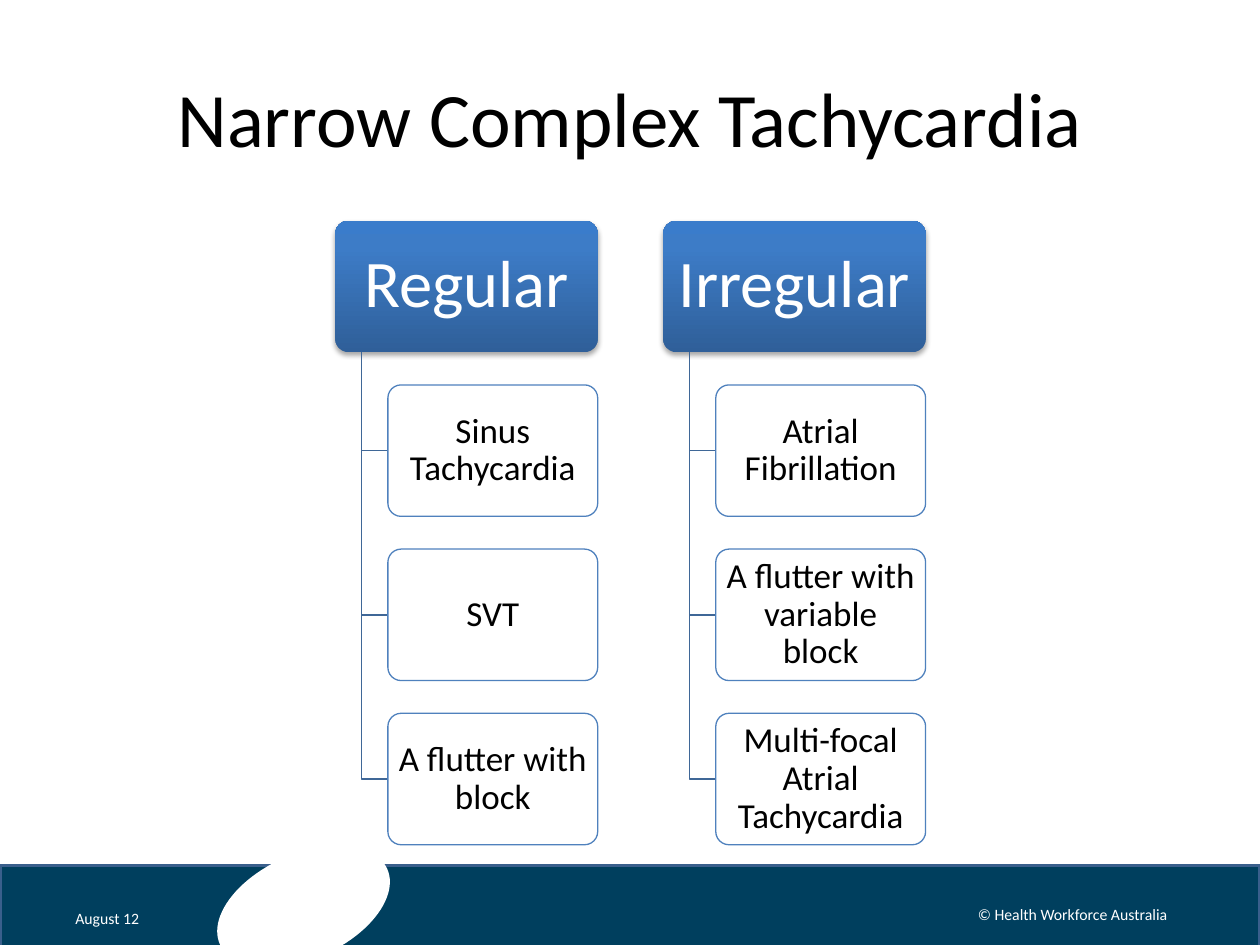
from lxml.etree import SubElement
from pptx import Presentation
from pptx.dml.color import RGBColor
from pptx.enum.shapes import MSO_SHAPE
from pptx.enum.text import MSO_ANCHOR, PP_ALIGN
from pptx.oxml.ns import qn
from pptx.util import Cm, Pt

COLORS = {
    "white": "FFFFFF",
    "black": "000000",
    "band": "003F5E",
    "band_line": "3A5F8C",
    "head_dark": "2F5F99",
    "head_mid": "3D7CC7",
    "head_light": "3A7CCB",
    "elbow": "3F6797",
    "outline": "4F81BD",
}
FONT = "Calibri"

BRANCHES = {
    "Regular": ["Sinus Tachycardia", "SVT", "A flutter with block"],
    "Irregular": [
        "Atrial Fibrillation",
        "A flutter with variable block",
        "Multi-focal Atrial Tachycardia",
    ],
}
LEFT, TOP = 6.76, 4.45
HEAD_W, BOX_H = 5.29, 2.65
COL_STEP, ROW_STEP = 6.61, 3.31
INDENT = 1.06


def rgb(name):
    return RGBColor.from_string(COLORS[name])


def write(sp, text, size, color="black", align=PP_ALIGN.CENTER, spacing=None, insets=None):
    tf = sp.text_frame
    tf.word_wrap = True
    tf.vertical_anchor = MSO_ANCHOR.MIDDLE
    if insets:
        tf.margin_left = tf.margin_right = Cm(insets[0])
        tf.margin_top = tf.margin_bottom = Cm(insets[1])
    p = tf.paragraphs[0]
    p.alignment = align
    if spacing:
        p.line_spacing = spacing
    r = p.add_run()
    r.text = text
    r.font.name = FONT
    r.font.size = Pt(size)
    r.font.color.rgb = rgb(color)


class Deck:
    def __init__(self):
        self.prs = Presentation()
        self.prs.slide_width = Cm(25.4)
        self.prs.slide_height = Cm(19.05)
        self.s = self.prs.slides.add_slide(self.prs.slide_layouts[5])

    def title(self, text, x, y, w, h):
        sp = self.s.shapes.title
        sp.left, sp.top, sp.width, sp.height = Cm(x), Cm(y), Cm(w), Cm(h)
        write(sp, text, 44)

    def shape(self, kind, x, y, w, h, fill, line=None, weight=0.75):
        sp = self.s.shapes.add_shape(kind, Cm(x), Cm(y), Cm(w), Cm(h))
        sp.shadow.inherit = False
        sp.fill.solid()
        sp.fill.fore_color.rgb = rgb(fill)
        if line:
            sp.line.color.rgb = rgb(line)
            sp.line.width = Pt(weight)
        else:
            sp.line.fill.background()
        return sp

    def head(self, text, x, y):
        sp = self.shape(MSO_SHAPE.ROUNDED_RECTANGLE, x, y, HEAD_W, BOX_H, "head_mid")
        sp.adjustments[0] = 0.1
        sp.fill.gradient()
        sp.fill.gradient_angle = 90
        stops = sp._element.spPr.find(".//" + qn("a:gsLst"))
        stops.clear()
        for pos, name in ((0, "head_dark"), (80, "head_mid"), (100, "head_light")):
            stop = SubElement(stops, qn("a:gs"), pos=str(pos * 1000))
            SubElement(stop, qn("a:srgbClr"), val=COLORS[name])
        effects = sp._element.spPr.find(qn("a:effectLst"))
        shadow = SubElement(
            effects, qn("a:outerShdw"), blurRad=str(Pt(3.1)), dist=str(Pt(1.8)),
            dir="5400000", rotWithShape="0",
        )
        color = SubElement(shadow, qn("a:srgbClr"), val=COLORS["black"])
        SubElement(color, qn("a:alpha"), val="35000")
        write(sp, text, 38, color="white", spacing=0.9, insets=(0.2, 0.13))

    def item(self, text, x, y):
        sp = self.shape(
            MSO_SHAPE.ROUNDED_RECTANGLE, x, y, HEAD_W - INDENT, BOX_H, "white", "outline"
        )
        sp.adjustments[0] = 0.1
        color = sp._element.spPr.find(qn("a:solidFill")).find(qn("a:srgbClr"))
        SubElement(color, qn("a:alpha"), val="90000")
        write(sp, text, 20, spacing=0.9, insets=(0.1, 0.08))

    def elbow(self, x, y, end_x, end_y):
        builder = self.s.shapes.build_freeform(Cm(x), Cm(y))
        builder.add_line_segments([(Cm(x), Cm(end_y)), (Cm(end_x), Cm(end_y))], close=False)
        sp = builder.convert_to_shape()
        sp.shadow.inherit = False
        sp.fill.background()
        sp.line.color.rgb = rgb("elbow")
        sp.line.width = Pt(0.75)

    def label(self, text, x, y, w, h, align):
        sp = self.s.shapes.add_textbox(Cm(x), Cm(y), Cm(w), Cm(h))
        write(sp, text, 9, color="white", align=align)


def main():
    deck = Deck()
    deck.shape(MSO_SHAPE.RECTANGLE, 0, 17.45, 25.4, 1.65, "band", "band_line", 2)
    oval = deck.shape(MSO_SHAPE.OVAL, 4.27, 17.22, 3.7, 2.11, "white")
    oval.rotation = 335.7
    deck.title("Narrow Complex Tachycardia", 1.27, 0.76, 22.86, 3.18)

    for col, (name, items) in enumerate(BRANCHES.items()):
        x = LEFT + col * COL_STEP
        deck.head(name, x, TOP)
        for row, text in enumerate(items, 1):
            y = TOP + row * ROW_STEP
            deck.elbow(x + INDENT / 2, TOP + BOX_H, x + INDENT, y + BOX_H / 2)
            deck.item(text, x + INDENT, y)

    deck.label("August 12", 1.27, 18.14, 2.03, 0.74, PP_ALIGN.LEFT)
    deck.label("© Health Workforce Australia", 18.9, 17.93, 5.44, 1.02, PP_ALIGN.CENTER)
    deck.prs.save("out.pptx")


if __name__ == "__main__":
    main()
